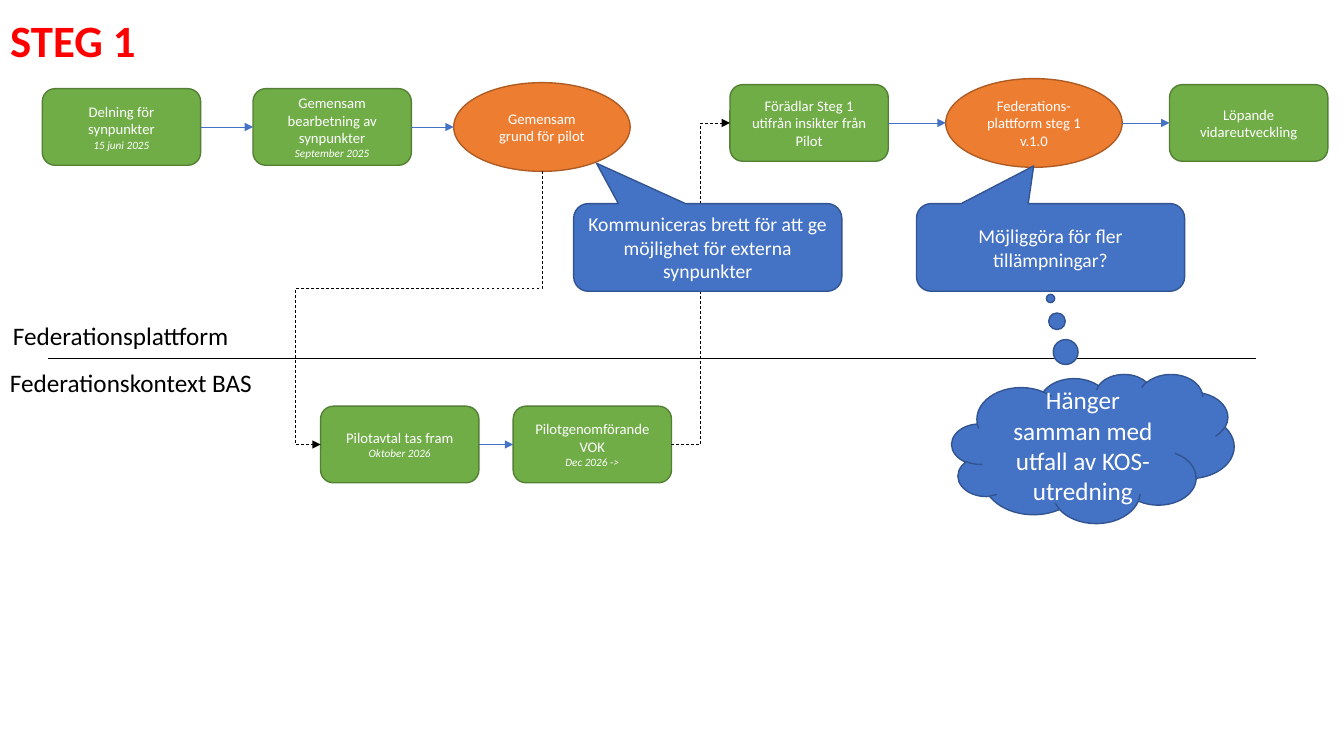
from dataclasses import dataclass
from lxml.etree import SubElement
from pptx import Presentation
from pptx.dml.color import RGBColor as RGB
from pptx.enum.dml import MSO_LINE as Dash
from pptx.enum.shapes import MSO_CONNECTOR as Link, MSO_SHAPE as Kind
from pptx.enum.text import MSO_ANCHOR as Anchor, MSO_AUTO_SIZE as Fit, PP_ALIGN as Align
from pptx.oxml.ns import qn
from pptx.util import Inches, Pt


@dataclass(frozen=True)
class Theme:
    """Colours as (fill, edge) pairs or single values, and type sizes."""
    font: str = "Calibri"
    green: tuple = ("70AD47", "538035")
    orange: tuple = ("ED7D31", "AF5C24")
    blue: tuple = ("4472C4", "325491")
    red: str = "FF0000"
    black: str = "000000"
    white: str = "FFFFFF"
    title: float = 32
    label: float = 18
    note: float = 14
    step: float = 10.5
    date: float = 8


THEME = Theme()
STEP = (1.57, 0.76)
GOAL = (1.75, 0.88)


def style(para, size, color, bold=False, italic=False):
    """Set the font of a whole paragraph."""
    font = para.font
    font.name, font.size = THEME.font, Pt(size)
    font.bold, font.italic = bold, italic
    font.color.rgb = RGB.from_string(color)


def node(slide, kind, box, paint, lines, adjust=()):
    """Draw a filled shape with centred lines of (text, size, italic)."""
    shape = slide.shapes.add_shape(kind, *map(Inches, box))
    shape.shadow.inherit = False
    shape.fill.solid()
    shape.fill.fore_color.rgb = RGB.from_string(paint[0])
    shape.line.color.rgb = RGB.from_string(paint[1])
    shape.line.width = Pt(1)
    for i, value in enumerate(adjust):
        shape.adjustments[i] = value
    frame = shape.text_frame
    frame.word_wrap = True
    frame.vertical_anchor = Anchor.MIDDLE
    for i, (text, size, italic) in enumerate(lines):
        para = frame.add_paragraph() if i else frame.paragraphs[0]
        para.text, para.alignment = text, Align.CENTER
        style(para, size, THEME.white, italic=italic)
    return shape


def step(slide, left, top, text, date=None):
    """Draw a green step, with its date below when there is one."""
    lines = [(text, THEME.step, False)]
    if date:
        lines.append((date, THEME.date, True))
    return node(slide, Kind.ROUNDED_RECTANGLE, (left, top, *STEP), THEME.green, lines)


def goal(slide, left, top, text):
    """Draw an orange milestone."""
    return node(slide, Kind.OVAL, (left, top, *GOAL), THEME.orange,
                [(text, THEME.step, False)])


def wire(slide, kind, start, end, color, arrow=True, dash=False):
    """Draw a thin connector between two points."""
    link = slide.shapes.add_connector(kind, *start, *end)
    link.line.width = Pt(0.5)
    link.line.color.rgb = RGB.from_string(color)
    if dash:
        link.line.dash_style = Dash.DASH
    props = link._element.spPr
    if arrow:
        SubElement(props.find(qn("a:ln")), qn("a:tailEnd"), type="triangle")
    SubElement(props, qn("a:effectLst"))
    return link


def mid(shape):
    """Return the height of the middle of a shape."""
    return shape.top + shape.height // 2


def join(slide, *row):
    """Link neighbours in a row with blue arrows."""
    for a, b in zip(row, row[1:]):
        wire(slide, Link.STRAIGHT, (a.left + a.width, mid(a)), (b.left, mid(b)),
             THEME.blue[0])


def descend(slide, a, b):
    """Lead a dashed arrow from the foot of one shape to the left of another."""
    x, y = a.left + a.width // 2, a.top + a.height
    high, wide = mid(b) - y, x - b.left
    left = (x + b.left - high) // 2
    top = (y + mid(b) - wide) // 2
    link = wire(slide, Link.ELBOW, (left, top), (left + high, top + wide),
                THEME.black, dash=True)
    link.rotation = 90
    geom = link._element.spPr.find(qn("a:prstGeom"))
    geom.set("prst", "bentConnector4")
    for name, value in (("adj1", 43000), ("adj2", 111400)):
        SubElement(geom.find(qn("a:avLst")), qn("a:gd"), name=name, fmla=f"val {value}")


def ascend(slide, a, b):
    """Lead a dashed arrow from the right of one shape to the left of another."""
    wire(slide, Link.ELBOW, (a.left + a.width, mid(a)), (b.left, mid(b)),
         THEME.black, dash=True)


def head(slide, box):
    """Place the red title."""
    title = slide.shapes.title
    title.left, title.top, title.width, title.height = map(Inches, box)
    frame = title.text_frame
    frame.text = "STEG 1"
    frame.word_wrap, frame.auto_size = False, Fit.SHAPE_TO_FIT_TEXT
    frame.vertical_anchor = Anchor.TOP
    frame.paragraphs[0].alignment = Align.LEFT
    style(frame.paragraphs[0], THEME.title, THEME.red, bold=True)


def label(slide, box, text):
    """Name a lane."""
    frame = slide.shapes.add_textbox(*map(Inches, box)).text_frame
    frame.word_wrap, frame.auto_size = False, Fit.SHAPE_TO_FIT_TEXT
    frame.text = text
    style(frame.paragraphs[0], THEME.label, THEME.black)


def divide(slide, box):
    """Draw the line between the lanes, with a name on each side."""
    left, top, width = box
    wire(slide, Link.STRAIGHT, (Inches(left), Inches(top)),
         (Inches(left + width), Inches(top)), THEME.black, arrow=False)
    label(slide, (left - 0.45, top - 0.43, 2.38, 0.4), "Federationsplattform")
    label(slide, (left - 0.48, top + 0.03, 2.63, 0.4), "Federationskontext BAS")


def flow(slide, left, top):
    """Draw the upper lane and return the goal and step that meet the pilot."""
    share = step(slide, left, top + 0.1, "Delning för synpunkter", "15 juni 2025")
    work = step(slide, left + 2.09, top + 0.1, "Gemensam bearbetning av synpunkter",
                "September 2025")
    base = goal(slide, left + 4.08, top + 0.04, "Gemensam grund för pilot")
    refine = step(slide, left + 6.82, top + 0.06,
                  "Förädlar Steg 1 utifrån insikter från Pilot")
    launch = goal(slide, left + 8.96, top, "Federations-plattform steg 1 v.1.0")
    evolve = step(slide, left + 11.18, top + 0.06, "Löpande vidareutveckling")
    join(slide, share, work, base)
    join(slide, refine, launch, evolve)
    return base, refine


def pilot(slide, left, top):
    """Draw the lower lane and return its two steps."""
    deal = step(slide, left, top, "Pilotavtal tas fram", "Oktober 2026")
    run = step(slide, left + 1.91, top, "Pilotgenomförande VOK", "Dec 2026 ->")
    join(slide, deal, run)
    return deal, run


def notes(slide, left, top):
    """Draw the blue callouts and the thought cloud."""
    size = (2.66, 0.87)
    for shift, text, tip in (
        (0, "Kommuniceras brett för att ge möjlighet för externa synpunkter", (-0.415, -0.961)),
        (3.4, "Möjliggöra för fler tillämpningar?", (-0.063, -0.929)),
    ):
        node(slide, Kind.ROUNDED_RECTANGULAR_CALLOUT, (left + shift, top, *size),
             THEME.blue, [(text, THEME.note, False)], tip)
    node(slide, Kind.CLOUD_CALLOUT, (left + 3.75, top + 1.69, 2.8, 1.48), THEME.blue,
         [("Hänger samman med utfall av KOS-utredning", THEME.label, False)],
         (-0.15, -1.006))


def main():
    """Build the slide and save it."""
    deck = Presentation()
    deck.slide_width, deck.slide_height = Inches(13.33), Inches(7.5)
    slide = deck.slides.add_slide(deck.slide_layouts[5])
    head(slide, (0, 0.08, 1.46, 0.64))
    divide(slide, (0.48, 3.56, 11.98))
    base, refine = flow(slide, 0.42, 0.78)
    deal, run = pilot(slide, 3.18, 4.03)
    descend(slide, base, deal)
    ascend(slide, run, refine)
    notes(slide, 5.69, 2.02)
    deck.save("out.pptx")


if __name__ == "__main__":
    main()
